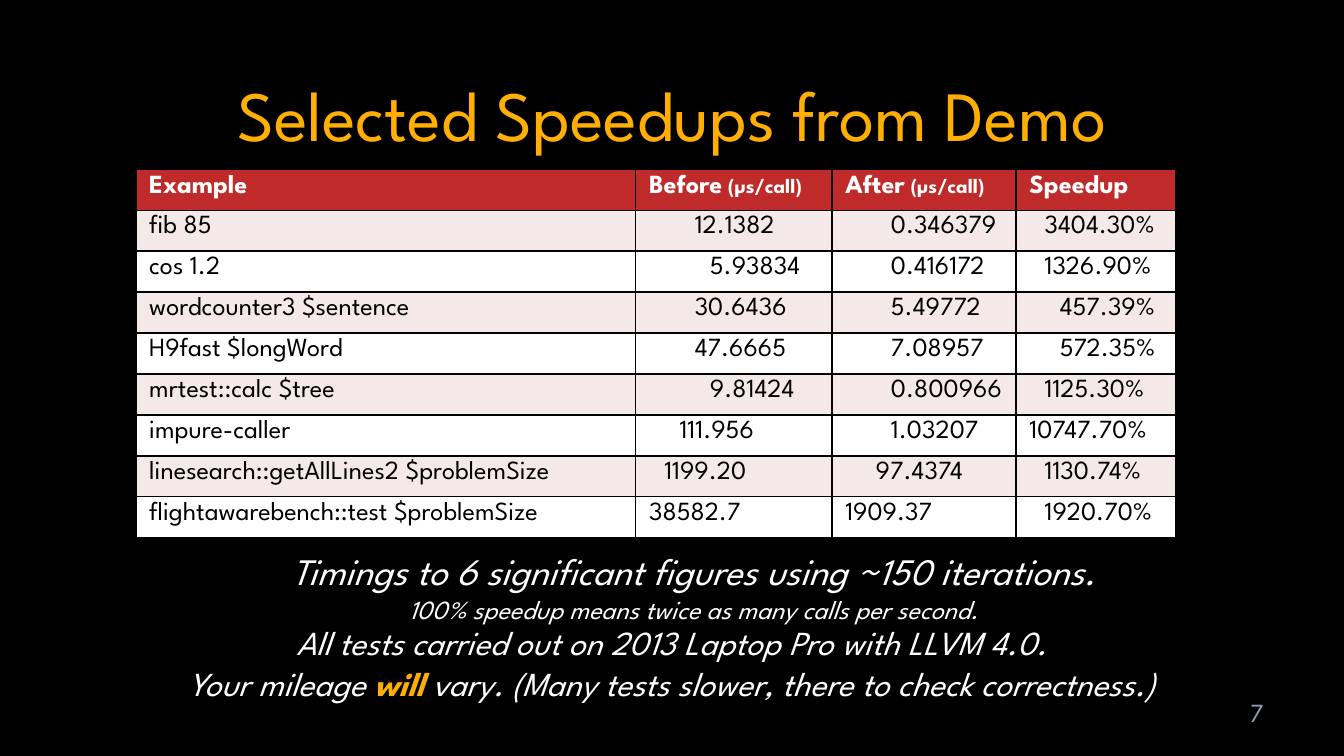
import dataclasses

import lxml.etree
import pptx
import pptx.dml.color
import pptx.enum.text
import pptx.oxml.ns
import pptx.util

ALIGN = pptx.enum.text.PP_ALIGN
ANCHOR = pptx.enum.text.MSO_ANCHOR


@dataclasses.dataclass(frozen=True)
class Theme:
    font: str = "League Spartan"
    black: str = "000000"
    white: str = "FFFFFF"
    accent: str = "FFAF03"
    header: str = "BF2B2B"
    band: str = "F4E8E8"
    muted: str = "8D9AB3"
    title_size: float = 37.8
    lead_size: float = 20
    note_size: float = 18
    body_size: float = 14
    unit_size: float = 11
    text_leading: float = 1.21
    cell_leading: float = 0.92


@dataclasses.dataclass(frozen=True)
class Area:
    """A rectangle in percent of the slide's width and height."""
    left: float
    top: float
    width: float
    height: float


@dataclasses.dataclass(frozen=True)
class Span:
    text: str
    size: float
    color: str
    bold: bool = False
    italic: bool = False


@dataclasses.dataclass(frozen=True)
class Column:
    heading: str
    unit: str
    share: float
    digits: int  # places before the decimal point; 0 for a text column


THEME = Theme()
WIDTH = pptx.util.Inches(10)
HEIGHT = WIDTH * 9 // 16
DIGIT_WIDTH = pptx.util.Pt(8.15)

TITLE_AREA = Area(6.7, 8.45, 86.6, 11.56)
TABLE_AREA = Area(10.1, 22.42, 77.4, 48.7)
LEAD_AREA = Area(16.3, 71.6, 70.7, 11.91)
NOTE_AREA = Area(5.7, 81.4, 88.6, 12.62)
NUMBER_AREA = Area(88.3, 91.56, 6.7, 5.33)

COLUMNS = [
    Column("Example", "", 3.72, 0),
    Column("Before", " (µs/call)", 1.46, 5),
    Column("After", " (µs/call)", 1.37, 4),
    Column("Speedup", "", 1.19, 5),
]
TIMINGS = [
    ("fib 85", "12.1382", "0.346379", "3404.30%"),
    ("cos 1.2", "5.93834", "0.416172", "1326.90%"),
    ("wordcounter3 $sentence", "30.6436", "5.49772", "457.39%"),
    ("H9fast $longWord", "47.6665", "7.08957", "572.35%"),
    ("mrtest::calc $tree", "9.81424", "0.800966", "1125.30%"),
    ("impure-caller", "111.956", "1.03207", "10747.70%"),
    ("linesearch::getAllLines2 $problemSize", "1199.20", "97.4374", "1130.74%"),
    ("flightawarebench::test $problemSize", "38582.7", "1909.37", "1920.70%"),
]


def rgb(color: str) -> pptx.dml.color.RGBColor:
    return pptx.dml.color.RGBColor.from_string(color)


def place(area: Area) -> list[int]:
    return [int(WIDTH * area.left / 100), int(HEIGHT * area.top / 100),
            int(WIDTH * area.width / 100), int(HEIGHT * area.height / 100)]


def write(para, spans: list[Span], *, leading: float, align=ALIGN.LEFT) -> None:
    """Write the spans; a line feed in a span becomes a line break."""
    para.alignment = align
    para.line_spacing = pptx.util.Pt(round(spans[0].size * leading, 1))
    for span in spans:
        for index, line in enumerate(span.text.split("\n")):
            if index:
                para.add_line_break()
            run = para.add_run()
            run.text = line
            run.font.name = THEME.font
            run.font.size = pptx.util.Pt(span.size)
            run.font.bold = span.bold
            run.font.italic = span.italic
            run.font.color.rgb = rgb(span.color)


def add_text(page, area: Area, paragraphs: list[list[Span]], *,
             align=ALIGN.CENTER, anchor=ANCHOR.TOP) -> None:
    frame = page.shapes.add_textbox(*place(area)).text_frame
    frame.word_wrap = True
    frame.vertical_anchor = anchor
    for index, spans in enumerate(paragraphs):
        para = frame.add_paragraph() if index else frame.paragraphs[0]
        write(para, spans, leading=THEME.text_leading, align=align)


def add_borders(cell) -> None:
    properties = cell._tc.get_or_add_tcPr()
    for position, side in enumerate(("lnL", "lnR", "lnT", "lnB")):
        line = lxml.etree.Element(pptx.oxml.ns.qn(f"a:{side}"), w="12700")
        fill = lxml.etree.SubElement(line, pptx.oxml.ns.qn("a:solidFill"))
        lxml.etree.SubElement(fill, pptx.oxml.ns.qn("a:srgbClr"), val=THEME.black)
        properties.insert(position, line)


def fill_cell(cell, spans: list[Span], *, fill: str, indent: int = 0) -> None:
    cell.margin_left = cell.margin_right = pptx.util.Inches(0.1)
    cell.margin_top = cell.margin_bottom = pptx.util.Inches(0.04)
    cell.fill.solid()
    cell.fill.fore_color.rgb = rgb(fill)
    add_borders(cell)
    para = cell.text_frame.paragraphs[0]
    write(para, spans, leading=THEME.cell_leading)
    if indent:
        para._p.get_or_add_pPr().set("marL", str(indent))


def add_timings(page) -> None:
    left, top, width, height = place(TABLE_AREA)
    count = len(TIMINGS) + 1
    table = page.shapes.add_table(count, len(COLUMNS), left, top, width, height).table
    table.horz_banding = False
    for row in table.rows:
        row.height = height // count
    total = sum(column.share for column in COLUMNS)
    for position, column in enumerate(COLUMNS):
        table.columns[position].width = int(width * column.share / total)
        heading = [Span(column.heading, THEME.body_size, THEME.white, bold=True)]
        if column.unit:
            heading.append(Span(column.unit, THEME.unit_size, THEME.white, bold=True))
        fill_cell(table.cell(0, position), heading, fill=THEME.header)
        # Numbers are indented so that their decimal points line up
        for number, values in enumerate(TIMINGS, start=1):
            value = values[position]
            gap = column.digits - value.index(".") if column.digits else 0
            fill_cell(table.cell(number, position),
                      [Span(value, THEME.body_size, THEME.black)],
                      fill=THEME.band if number % 2 else THEME.white,
                      indent=gap * DIGIT_WIDTH)


def note(text: str, size: float) -> Span:
    return Span(text, size, THEME.white, italic=True)


def main() -> None:
    deck = pptx.Presentation()
    deck.slide_width, deck.slide_height = WIDTH, HEIGHT
    page = deck.slides.add_slide(deck.slide_layouts[6])
    page.background.fill.solid()
    page.background.fill.fore_color.rgb = rgb(THEME.black)

    # Title and table
    add_text(page, TITLE_AREA,
             [[Span("Selected Speedups from Demo", THEME.title_size, THEME.accent)]])
    add_timings(page)

    # Slide number
    add_text(page, NUMBER_AREA, [[Span("7", THEME.body_size, THEME.muted)]],
             align=ALIGN.RIGHT, anchor=ANCHOR.MIDDLE)

    # Remarks below the table
    add_text(page, NOTE_AREA, [[
        note("All tests carried out on 2013 Laptop Pro with LLVM 4.0.\nYour mileage ",
             THEME.note_size),
        Span("will", THEME.note_size, THEME.accent, bold=True, italic=True),
        note(" vary. (Many tests slower, there to check correctness.)", THEME.note_size),
    ]])
    add_text(page, LEAD_AREA, [
        [note("Timings to 6 significant figures using ~150 iterations.", THEME.lead_size)],
        [note("100% speedup means twice as many calls per second.", THEME.body_size)],
    ])
    deck.save("out.pptx")


if __name__ == "__main__":
    main()
